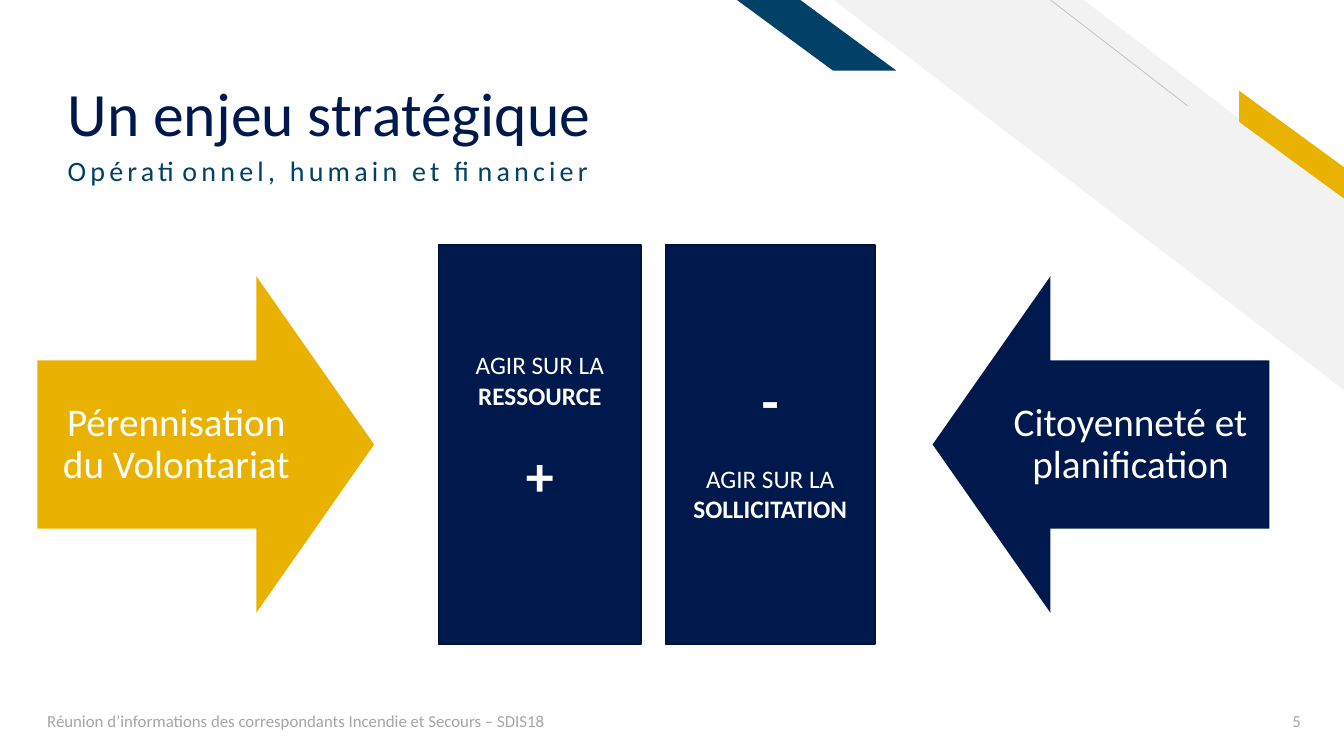
from dataclasses import dataclass

from lxml import etree
from pptx import Presentation
from pptx.dml.color import RGBColor
from pptx.enum.shapes import MSO_CONNECTOR, MSO_SHAPE
from pptx.enum.text import MSO_ANCHOR, MSO_AUTO_SIZE, PP_ALIGN
from pptx.oxml.ns import qn
from pptx.util import Inches, Pt

LEFT, CENTER, RIGHT = PP_ALIGN.LEFT, PP_ALIGN.CENTER, PP_ALIGN.RIGHT
TOP, MIDDLE, BOTTOM = MSO_ANCHOR.TOP, MSO_ANCHOR.MIDDLE, MSO_ANCHOR.BOTTOM
RECT, STRIPE, SLANT = MSO_SHAPE.RECTANGLE, MSO_SHAPE.DIAGONAL_STRIPE, MSO_SHAPE.PARALLELOGRAM
RIGHT_ARROW, LEFT_ARROW = MSO_SHAPE.RIGHT_ARROW, MSO_SHAPE.LEFT_ARROW
STRAIGHT, NO_FIT = MSO_CONNECTOR.STRAIGHT, MSO_AUTO_SIZE.NONE


@dataclass(frozen=True)
class Theme:
    """Font, colours and type sizes of the deck."""
    font: str = "Calibri"
    navy: str = "00194C"
    edge: str = "001238"
    blue: str = "014067"
    gold: str = "EAB200"
    pale: str = "F2F2F2"
    rule: str = "BFBFBF"
    grey: str = "A5A5A5"
    white: str = "FFFFFF"
    title: int = 44
    sign: int = 40
    arrow: int = 28
    subtitle: int = 20
    body: int = 18
    footer: int = 12


def add_run(p, text, theme, size, color, bold=False, spacing=None):
    """Add a run of text with its format."""
    r = p.add_run()
    r.text = text
    r.font.name, r.font.size, r.font.bold = theme.font, Pt(size), bold
    r.font.color.rgb = RGBColor.from_string(color)
    if spacing:
        r.font._element.set("spc", str(spacing * 100))


class Deck:
    """Current slide and theme, with lengths in percent of the slide's size."""

    def __init__(self, prs, theme):
        """Open a slide with a title and a body."""
        self.prs, self.theme = prs, theme
        self.s = prs.slides.add_slide(prs.slide_layouts[1])

    def x(self, share):
        """Turn a share of the width into a length."""
        return round(self.prs.slide_width * share / 100)

    def y(self, share):
        """Turn a share of the height into a length."""
        return round(self.prs.slide_height * share / 100)

    def box(self, left, top, width, height):
        """Turn four shares into a position and a size."""
        return self.x(left), self.y(top), self.x(width), self.y(height)

    def frame(self, sp, anchor, insets=(0.1, 0.05, 0.1, 0.05)):
        """Set the wrapping, anchor and insets of a text frame."""
        tf = sp.text_frame
        tf.word_wrap, tf.auto_size, tf.vertical_anchor = True, NO_FIT, anchor
        tf.margin_left, tf.margin_top, tf.margin_right, tf.margin_bottom = map(Inches, insets)
        return tf

    def placeholder(self, index, box, text, size, color, anchor, bottom, spacing=None):
        """Move and fill a template placeholder."""
        sp = self.s.placeholders[index]
        sp.left, sp.top, sp.width, sp.height = self.box(*box)
        p = self.frame(sp, anchor, (0.1, 0.05, 0.1, bottom)).paragraphs[0]
        p.alignment, p.line_spacing, p.space_before = LEFT, 0.9, Pt(0)
        pPr = p._p.get_or_add_pPr()
        pPr.set("marL", "0")
        pPr.set("indent", "0")
        etree.SubElement(pPr, qn("a:buNone"))
        add_run(p, text, self.theme, size, color, spacing=spacing)

    def paint(self, sp, fill, line=None):
        """Set the fill and the outline of a shape."""
        sp.shadow.inherit = False
        sp.fill.solid()
        sp.fill.fore_color.rgb = RGBColor.from_string(fill)
        if line:
            sp.line.color.rgb = RGBColor.from_string(line)
            sp.line.width = Pt(1)
        else:
            sp.line.fill.background()

    def shape(self, kind, box, fill, line=None, adjust=(), flip=False):
        """Add a preset shape."""
        sp = self.s.shapes.add_shape(kind, *self.box(*box))
        self.paint(sp, fill, line)
        for i, value in enumerate(adjust):
            sp.adjustments[i] = value
        if flip:
            sp._element.spPr.find(qn("a:xfrm")).set("flipH", "1")
        return sp

    def polygon(self, points, fill):
        """Add a closed outline."""
        pts = [(self.x(a), self.y(b)) for a, b in points]
        fb = self.s.shapes.build_freeform(*pts[0])
        fb.add_line_segments(pts[1:])
        self.paint(fb.convert_to_shape(), fill)

    def line(self, x1, y1, x2, y2, color):
        """Add a thin straight line."""
        c = self.s.shapes.add_connector(STRAIGHT, self.x(x1), self.y(y1), self.x(x2), self.y(y2))
        c.line.color.rgb, c.line.width = RGBColor.from_string(color), Pt(0.5)
        etree.SubElement(c._element.spPr, qn("a:effectLst"))

    def footer(self, box, text, align):
        """Add a text of the footer."""
        p = self.frame(self.s.shapes.add_textbox(*self.box(*box)), MIDDLE).paragraphs[0]
        p.alignment = align
        add_run(p, text, self.theme, self.theme.footer, self.theme.grey)

    def arrow(self, kind, left, text, fill):
        """Add a block arrow with its label."""
        sp = self.shape(kind, (left, 36.53, 25.06, 44.53), fill, adjust=(0.5, 0.35))
        p = self.frame(sp, MIDDLE, (0.2,) * 4).paragraphs[0]
        p.alignment, p.line_spacing = CENTER, 0.9
        add_run(p, text, self.theme, self.theme.arrow, self.theme.white)

    def panel(self, left, width, paragraphs, bottom=0.05):
        """Add a panel of paragraphs, each a list of text, size and weight."""
        t = self.theme
        sp = self.shape(RECT, (left, 32.4, width, 52.8), t.navy, t.edge)
        tf = self.frame(sp, MIDDLE, (0.1, 0.05, 0.1, bottom))
        for i, runs in enumerate(paragraphs):
            p = tf.add_paragraph() if i else tf.paragraphs[0]
            p.alignment = CENTER
            if i:
                p.space_before = Pt(22)
            for text, size, bold in runs:
                add_run(p, text, t, size, t.white, bold)


def main():
    """Build the slide."""
    prs = Presentation()
    prs.slide_width, prs.slide_height = Inches(13.33), Inches(7.5)
    t = Theme()
    d = Deck(prs, t)

    d.shape(STRIPE, (62.04, 0, 37.96, 51.6), t.pale, adjust=(0.51,), flip=True)
    d.line(88.37, 14, 78.17, 0, t.rule)
    d.polygon([(92.2, 12), (100, 22.13), (100, 26.27), (92.2, 16.13)], t.gold)
    d.shape(SLANT, (54.84, 0, 11.85, 9.33), t.blue, adjust=(1.36,), flip=True)

    d.placeholder(0, (4.28, 3.07, 68.34, 16.8), "Un enjeu stratégique",
                  t.title, t.navy, BOTTOM, 0)
    d.placeholder(1, (4.28, 20.13, 60.47, 8.93), "Opérationnel, humain et financier",
                  t.subtitle, t.blue, TOP, 0.05, spacing=3)
    d.footer((2.78, 92.67, 41.26, 5.33),
             "Réunion d’informations des correspondants Incendie et Secours – SDIS18", LEFT)
    d.footer((91.45, 92.67, 6.08, 5.33), "5", RIGHT)

    d.arrow(RIGHT_ARROW, 2.78, "Pérennisation du Volontariat", t.gold)
    d.arrow(LEFT_ARROW, 69.39, "Citoyenneté et planification", t.navy)

    act = ("AGIR SUR LA ", t.body, False)
    d.panel(32.63, 15.08, [[act, ("RESSOURCE", t.body, True)], [("+", t.sign, True)]], bottom=0.36)
    d.panel(49.51, 15.6, [[("-", t.sign, True)], [act, ("SOLLICITATION", t.body, True)]])

    prs.save("out.pptx")


if __name__ == "__main__":
    main()
